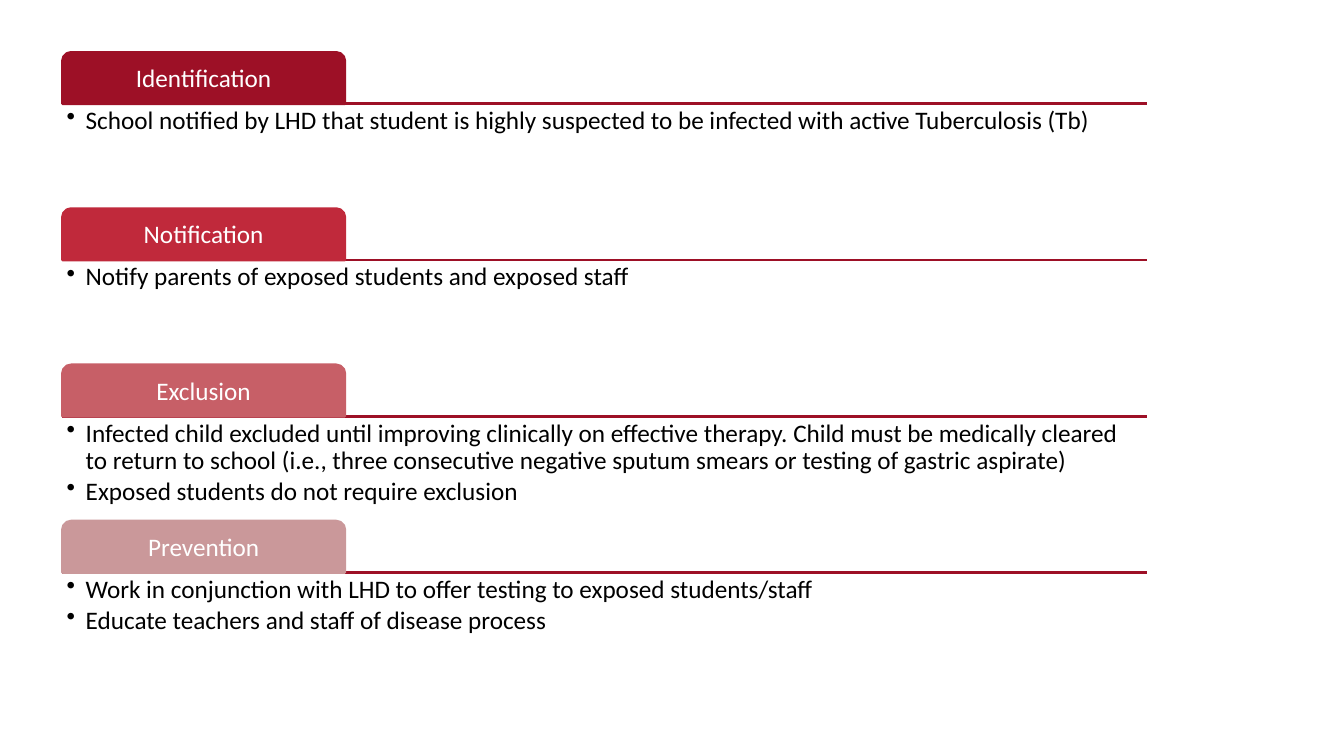
"""Build a slide of four response steps, each a coloured tab over a rule and bullets."""
import pptx
import pptx.util
import pptx.dml.color
import pptx.enum.shapes
import pptx.enum.text
import pptx.oxml.ns
from lxml import etree

STEPS = [
    ("Identification", "crimson", [
        "School notified by LHD that student is highly suspected to be infected with active Tuberculosis (Tb)"]),
    ("Notification", "red", [
        "Notify parents of exposed students and exposed staff"]),
    ("Exclusion", "rose", [
        "Infected child excluded until improving clinically on effective therapy. Child must be medically "
        "cleared to return to school (i.e., three consecutive negative sputum smears or testing of gastric aspirate)",
        "Exposed students do not require exclusion"]),
    ("Prevention", "blush", [
        "Work in conjunction with LHD to offer testing to exposed students/staff",
        "Educate teachers and staff of disease process"]),
]
COLORS = {"crimson": "9D1026", "red": "C0293B", "rose": "C75F67", "blush": "CA989A",
          "white": "FFFFFF", "black": "000000"}
PX = 9144
SLIDE_W, SLIDE_H = 1333, 750
LEFT, TOP, PITCH = 62, 52, 155
TAB_W, TAB_H = 280, 51
BODY_W, BODY_H = 1076, 102
INSET, INDENT = 4, 19
LINE_W = pptx.util.Pt(2)
FONT = {"name": "Calibri", "size": pptx.util.Pt(18)}
FRAME = {"word_wrap": True, "margin_left": INSET * PX, "margin_right": INSET * PX,
         "margin_top": INSET * PX, "margin_bottom": INSET * PX}
TAB_FRAME = {**FRAME, "vertical_anchor": pptx.enum.text.MSO_ANCHOR.MIDDLE}
BODY_FRAME = {**FRAME, "vertical_anchor": pptx.enum.text.MSO_ANCHOR.TOP}
TAB_PARA = {"alignment": pptx.enum.text.PP_ALIGN.CENTER, "line_spacing": 0.9}
BODY_PARA = {"alignment": pptx.enum.text.PP_ALIGN.LEFT, "line_spacing": 0.9,
             "space_after": pptx.util.Pt(2.5)}


def rgb(name):
    return pptx.dml.color.RGBColor.from_string(COLORS[name])


def apply(obj, values):
    for key, value in values.items():
        setattr(obj, key, value)


def write(p, text, color, values):
    apply(p, values)
    r = p.add_run()
    r.text = text
    apply(r.font, FONT)
    r.font.color.rgb = rgb(color)


def add_rule(shapes, y):
    line = shapes.add_connector(pptx.enum.shapes.MSO_CONNECTOR.STRAIGHT,
                                LEFT * PX, y * PX, (LEFT + BODY_W) * PX, y * PX)
    line.line.color.rgb = rgb("crimson")
    line.line.width = LINE_W
    etree.SubElement(line._element.spPr, pptx.oxml.ns.qn("a:effectLst"))


def add_tab(shapes, y, title, color):
    sp = shapes.add_shape(pptx.enum.shapes.MSO_SHAPE.ROUND_2_SAME_RECTANGLE,
                          LEFT * PX, y * PX, TAB_W * PX, TAB_H * PX)
    sp.shadow.inherit = False
    sp.fill.solid()
    sp.fill.fore_color.rgb = rgb(color)
    sp.line.color.rgb = rgb(color)
    sp.line.width = LINE_W
    apply(sp.text_frame, TAB_FRAME)
    write(sp.text_frame.paragraphs[0], title, "white", TAB_PARA)


def add_bullets(shapes, y, items):
    tf = shapes.add_textbox(LEFT * PX, y * PX, BODY_W * PX, BODY_H * PX).text_frame
    apply(tf, BODY_FRAME)
    for i, item in enumerate(items):
        p = tf.add_paragraph() if i else tf.paragraphs[0]
        pPr = p._p.get_or_add_pPr()
        pPr.set("marL", str(INDENT * PX))
        pPr.set("indent", str(-INDENT * PX))
        etree.SubElement(pPr, pptx.oxml.ns.qn("a:buChar"), char="•")
        write(p, item, "black", BODY_PARA)


def main():
    prs = pptx.Presentation()
    prs.slide_width, prs.slide_height = SLIDE_W * PX, SLIDE_H * PX
    s = prs.slides.add_slide(prs.slide_layouts[6])
    tops = [TOP + i * PITCH for i in range(len(STEPS))]
    for y in tops:
        add_rule(s.shapes, y + TAB_H)
    for y, (title, color, items) in zip(tops, STEPS):
        add_tab(s.shapes, y, title, color)
        add_bullets(s.shapes, y + TAB_H, items)
    prs.save("out.pptx")


if __name__ == "__main__":
    main()
